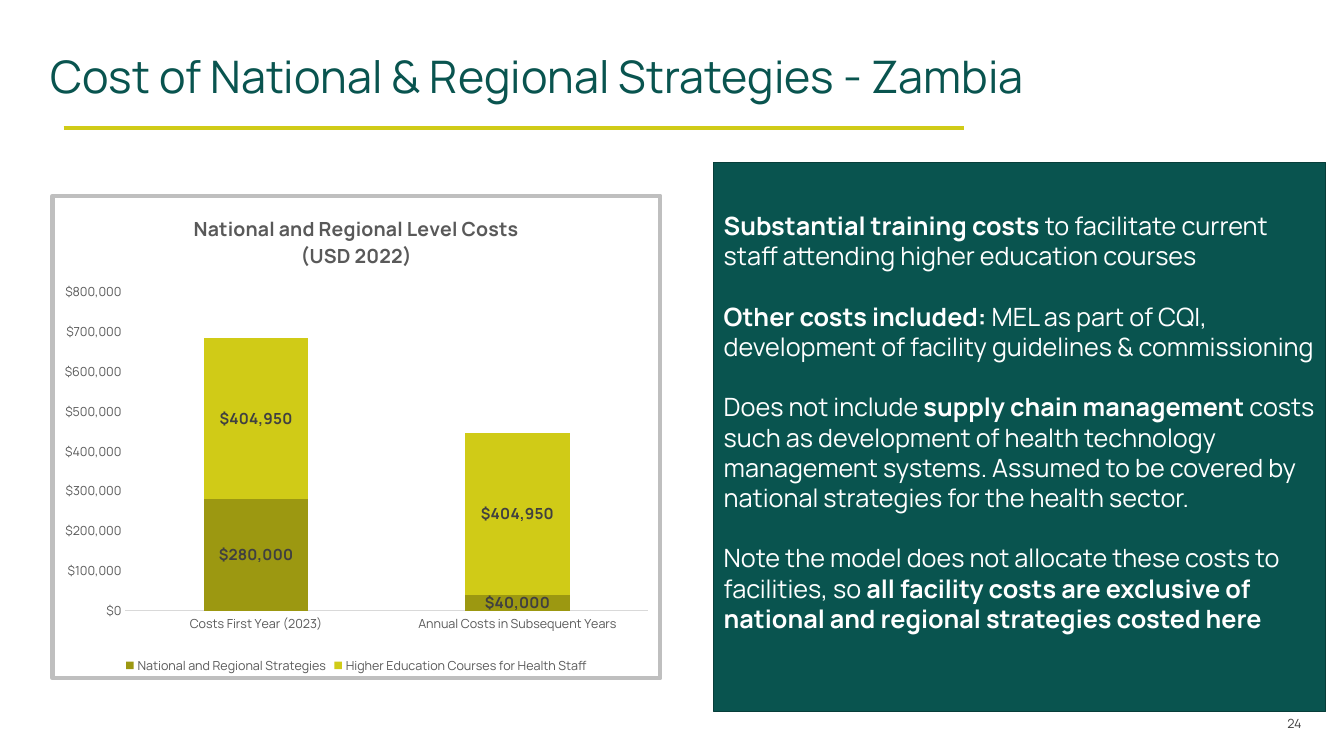
"""Build the slide on the cost of national and regional strategies in Zambia."""
from lxml import etree
from pptx import Presentation
from pptx.chart.data import CategoryChartData
from pptx.dml.color import RGBColor
from pptx.enum.chart import XL_CHART_TYPE, XL_LABEL_POSITION, XL_LEGEND_POSITION, XL_TICK_MARK
from pptx.enum.shapes import MSO_CONNECTOR, MSO_SHAPE
from pptx.enum.text import MSO_ANCHOR, PP_ALIGN
from pptx.oxml import parse_xml
from pptx.oxml.ns import nsdecls, qn
from pptx.util import Inches, Pt

STACKED = XL_CHART_TYPE.COLUMN_STACKED
CENTER_LABEL = XL_LABEL_POSITION.CENTER
BOTTOM_LEGEND = XL_LEGEND_POSITION.BOTTOM
NO_TICK = XL_TICK_MARK.NONE
STRAIGHT = MSO_CONNECTOR.STRAIGHT
RECTANGLE = MSO_SHAPE.RECTANGLE
TOP, MIDDLE = MSO_ANCHOR.TOP, MSO_ANCHOR.MIDDLE
LEFT, RIGHT = PP_ALIGN.LEFT, PP_ALIGN.RIGHT

FONT = "Manrope"
TEAL = RGBColor(0x09, 0x54, 0x4F)
DARK_TEAL = RGBColor(0x07, 0x3E, 0x3A)
LIME = RGBColor(0xD0, 0xCB, 0x17)
OLIVE = RGBColor(0x9C, 0x98, 0x11)
WHITE = RGBColor(0xFF, 0xFF, 0xFF)
CHARCOAL = RGBColor(0x40, 0x40, 0x40)
GRAY = RGBColor(0x59, 0x59, 0x59)
PALE_GRAY = RGBColor(0xD9, 0xD9, 0xD9)
FRAME_GRAY = RGBColor(0xBF, 0xBF, 0xBF)
BLACK = RGBColor(0, 0, 0)

TITLE = [[("Cost of National & Regional Strategies - Zambia", False)]]
PAGE_NUMBER = [[("24", False)]]
NOTES = [
    [("Substantial training costs ", True),
     ("to facilitate current staff attending higher education courses", False)],
    [("Other costs included: ", True),
     ("MEL as part of CQI, development of facility guidelines & commissioning", False)],
    [("Does not include ", False), ("supply chain management ", True),
     ("costs such as development of health technology management systems. "
      "Assumed to be covered by national strategies for the health sector.", False)],
    [("Note the model does not allocate these costs to facilities, so ", False),
     ("all facility costs are exclusive of national and regional strategies costed here", True)],
]
CHART_TITLE = [[("National and Regional Level Costs", True)], [("(USD 2022)", True)]]
CATEGORIES = ["Costs First Year (2023)", "Annual Costs in Subsequent Years"]
COSTS = [
    ("National and Regional Strategies", (280000, 40000), OLIVE),
    ("Higher Education Courses for Health Staff", (404950, 404950), LIME),
]
DOLLARS = '"$"#,##0'
PLOT_AREA = {"x": 0.12, "y": 0.2, "w": 0.86, "h": 0.66}
NOTE_LINE = Pt(21.6)


def style_font(font, size, color, bold=False):
    font.name, font.size, font.bold = FONT, Pt(size), bold
    font.color.rgb = color


def write(frame, paragraphs, size, color, align=None):
    for index, spans in enumerate(paragraphs):
        para = frame.add_paragraph() if index else frame.paragraphs[0]
        para.alignment = align
        for text, bold in spans:
            span = para.add_run()
            span.text = text
            style_font(span.font, size, color, bold)


def set_frame(frame, anchor, left, top, right, bottom):
    frame.word_wrap, frame.vertical_anchor = True, anchor
    frame.margin_left, frame.margin_top = Inches(left), Inches(top)
    frame.margin_right, frame.margin_bottom = Inches(right), Inches(bottom)


def add_text(page, place, insets, paragraphs, size, color, align):
    frame = page.shapes.add_textbox(*map(Inches, place)).text_frame
    set_frame(frame, TOP, *insets)
    write(frame, paragraphs, size, color, align)


def add_rule(page):
    rule = page.shapes.add_connector(STRAIGHT, *map(Inches, (0.63, 1.27, 9.56, 1.27)))
    rule.line.color.rgb, rule.line.width = LIME, Pt(3.25)
    etree.SubElement(rule._element.spPr, qn("a:effectLst"))


def add_notes(page):
    box = page.shapes.add_shape(RECTANGLE, *map(Inches, (7.08, 1.61, 6.07, 5.45)))
    box.shadow.inherit = False
    box.fill.solid()
    box.fill.fore_color.rgb = TEAL
    box.line.color.rgb, box.line.width = DARK_TEAL, Pt(1)
    set_frame(box.text_frame, MIDDLE, 0.1, 0.05, 0.1, 0.35)
    write(box.text_frame, NOTES, 18, WHITE, LEFT)
    for index, para in enumerate(box.text_frame.paragraphs):
        para.line_spacing = NOTE_LINE
        para.space_before = NOTE_LINE if index else Pt(0)


def frame_chart(chart):
    space = chart._chartSpace
    space.find(qn("c:chart")).addnext(parse_xml(
        f'<c:spPr {nsdecls("c", "a")}>'
        f'<a:solidFill><a:srgbClr val="{WHITE}"/></a:solidFill>'
        f'<a:ln w="{Pt(3)}"><a:solidFill><a:srgbClr val="{FRAME_GRAY}"/></a:solidFill></a:ln>'
        '</c:spPr>'))
    plot_area = space.find(qn("c:chart")).find(qn("c:plotArea"))
    for old in plot_area.findall(qn("c:layout")):
        plot_area.remove(old)
    modes = '<c:xMode val="edge"/><c:yMode val="edge"/>'
    sizes = "".join(f'<c:{key} val="{value}"/>' for key, value in PLOT_AREA.items())
    plot_area.insert(0, parse_xml(
        f'<c:layout {nsdecls("c")}><c:manualLayout><c:layoutTarget val="inner"/>'
        f'{modes}{sizes}</c:manualLayout></c:layout>'))


def add_cost_chart(page):
    data = CategoryChartData(number_format=DOLLARS)
    data.categories = CATEGORIES
    for name, values, _ in COSTS:
        data.add_series(name, values)
    place = map(Inches, (0.5, 1.92, 6.07, 4.83))
    chart = page.shapes.add_chart(STACKED, *place, data).chart
    style_font(chart.font, 10, BLACK)
    chart.has_title = True
    write(chart.chart_title.text_frame, CHART_TITLE, 14, GRAY)
    chart.chart_title.include_in_layout = False
    chart.has_legend = True
    chart.legend.position, chart.legend.include_in_layout = BOTTOM_LEGEND, False
    style_font(chart.legend.font, 9, GRAY)

    for axis in (chart.category_axis, chart.value_axis):
        axis.major_tick_mark = axis.minor_tick_mark = NO_TICK
        axis.has_major_gridlines = False
        style_font(axis.tick_labels.font, 9, GRAY)
    baseline = chart.category_axis.format.line
    baseline.color.rgb, baseline.width = PALE_GRAY, Pt(0.75)
    scale = chart.value_axis
    scale.minimum_scale, scale.maximum_scale, scale.major_unit = 0, 800000, 100000
    scale.format.line.fill.background()
    scale.tick_labels.number_format = DOLLARS
    scale.tick_labels.number_format_is_linked = False

    plot = chart.plots[0]
    plot.gap_width, plot.overlap, plot.vary_by_categories = 150, 100, False
    for series, (_, _, color) in zip(plot.series, COSTS):
        series.format.fill.solid()
        series.format.fill.fore_color.rgb = color
        labels = series.data_labels
        labels.show_value, labels.position = True, CENTER_LABEL
        labels.number_format, labels.number_format_is_linked = DOLLARS, False
        style_font(labels.font, 11, CHARCOAL, True)
    frame_chart(chart)


def main():
    deck = Presentation()
    deck.slide_width, deck.slide_height = Inches(13.33), Inches(7.5)
    page = deck.slides.add_slide(deck.slide_layouts[6])
    add_rule(page)
    add_text(page, (0.5, 0.48, 11.49, 1.12), (0, 0, 0, 0), TITLE, 32, TEAL, LEFT)
    add_text(page, (9.91, 7.06, 3, 0.26), (0, 0.04, 0, 0), PAGE_NUMBER, 9, CHARCOAL, RIGHT)
    add_notes(page)
    add_cost_chart(page)
    deck.save("out.pptx")


if __name__ == "__main__":
    main()
